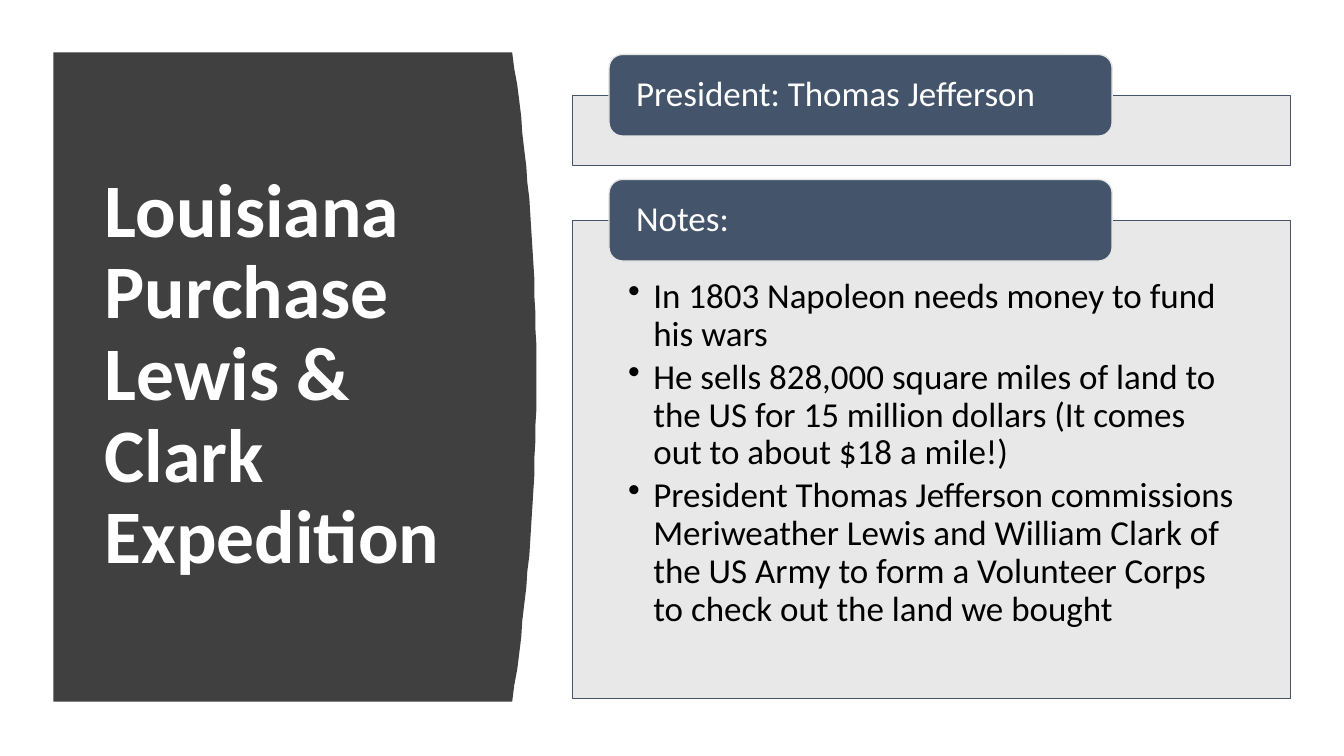
import pptx
import pptx.dml.color
import pptx.enum.shapes
import pptx.enum.text
import pptx.oxml.ns
import pptx.util
from lxml import etree

PX = 9144  # EMU in one px, 100 px to the inch
FONT = "Calibri"
CHARCOAL, SLATE, PALE, WHITE, BLACK = "404040", "44546A", "E7E6E6", "FFFFFF", "000000"
SHAPES = pptx.enum.shapes.MSO_SHAPE
MIDDLE = pptx.enum.text.MSO_ANCHOR.MIDDLE
TOP = pptx.enum.text.MSO_ANCHOR.TOP

TITLE = "Louisiana Purchase\vLewis & Clark Expedition"
NOTES = [
    "In 1803 Napoleon needs money to fund his wars",
    "He sells 828,000 square miles of land to the US for 15 million dollars "
    "(It comes out to about $18 a mile!)",
    "President Thomas Jefferson commissions Meriweather Lewis and William Clark "
    "of the US Army to form a Volunteer Corps to check out the land we bought",
]


def px(*lengths):
    return [pptx.util.Emu(length * PX) for length in lengths]


def rgb(hex_string):
    return pptx.dml.color.RGBColor.from_string(hex_string)


def add_drawing_tag(parent, tag, **attributes):
    return etree.SubElement(parent, pptx.oxml.ns.qn(f"a:{tag}"), **attributes)


def write(shape, lines, size, color, insets, anchor, bold=False, space_after=0):
    """Fill a shape with left-aligned paragraphs; insets are left, top, right, bottom."""
    frame = shape.text_frame
    frame.word_wrap = True
    frame.vertical_anchor = anchor
    (frame.margin_left, frame.margin_top,
     frame.margin_right, frame.margin_bottom) = px(*insets)
    frame.text = "\n".join(lines)
    for paragraph in frame.paragraphs:
        paragraph.alignment = pptx.enum.text.PP_ALIGN.LEFT
        paragraph.line_spacing = 0.9
        paragraph.space_after = pptx.util.Pt(space_after)
        paragraph.font.name = FONT
        paragraph.font.size = pptx.util.Pt(size)
        paragraph.font.bold = bold
        paragraph.font.color.rgb = rgb(color)


def add_bullets(shape, indent):
    for paragraph in shape.text_frame.paragraphs:
        properties = paragraph._p.get_or_add_pPr()
        properties.set("marL", str(indent * PX))
        properties.set("indent", str(-indent * PX))
        bullet = etree.Element(pptx.oxml.ns.qn("a:buChar"), char="•")
        properties.find(pptx.oxml.ns.qn("a:defRPr")).addprevious(bullet)


def add_box(slide, kind, box, fill, line):
    shape = slide.shapes.add_shape(kind, *px(*box))
    shape.shadow.inherit = False
    shape.fill.solid()
    shape.fill.fore_color.rgb = rgb(fill)
    shape.line.color.rgb = rgb(line)
    shape.line.width = pptx.util.Pt(1)
    return shape


def add_title_panel(slide, left, top, width, height):
    """Dark panel whose right side bulges outwards as a parabola."""
    bulge, steps = 24, 40
    right_side = []
    for step in range(steps + 1):
        offset = 2 * step / steps - 1
        right_side.append((left + width - bulge * offset ** 2, top + height * step / steps))
    outline = slide.shapes.build_freeform(left, top, scale=PX)
    outline.add_line_segments(right_side + [(left, top + height)], close=True)
    panel = outline.convert_to_shape()
    panel.shadow.inherit = False
    panel.fill.solid()
    panel.fill.fore_color.rgb = rgb(CHARCOAL)
    panel.line.fill.background()

    title = slide.shapes.add_textbox(*px(left + 41, top + 59, width - 105, height - 120))
    write(title, [TITLE], 54, WHITE, (10, 5, 10, 5), MIDDLE, bold=True)


def add_section(slide, left, top, width, height, heading, notes=()):
    """Pale body with a heading tab that straddles its top edge."""
    body = add_box(slide, SHAPES.RECTANGLE, (left, top, width, height), PALE, SLATE)
    pale_color = body.fill._xPr.find(".//" + pptx.oxml.ns.qn("a:srgbClr"))
    add_drawing_tag(pale_color, "alpha", val="90000")
    if notes:
        write(body, notes, 25, BLACK, (55, 57, 55, 19), TOP, space_after=3.75)
        add_bullets(body, 25)

    tab = add_box(slide, SHAPES.ROUNDED_RECTANGLE, (left + 36, top - 41, 499, 81), SLATE, PALE)
    write(tab, [heading], 25, WHITE, (23, 4, 23, 4), MIDDLE)


def main():
    deck = pptx.Presentation()
    deck.slide_width, deck.slide_height = px(1333, 750)
    slide = deck.slides.add_slide(deck.slide_layouts[6])
    add_title_panel(slide, 53, 52, 479, 644)
    add_section(slide, 568, 95, 712, 69, "President: Thomas Jefferson")
    add_section(slide, 568, 219, 712, 474, "Notes:", NOTES)
    deck.save("out.pptx")


if __name__ == "__main__":
    main()
